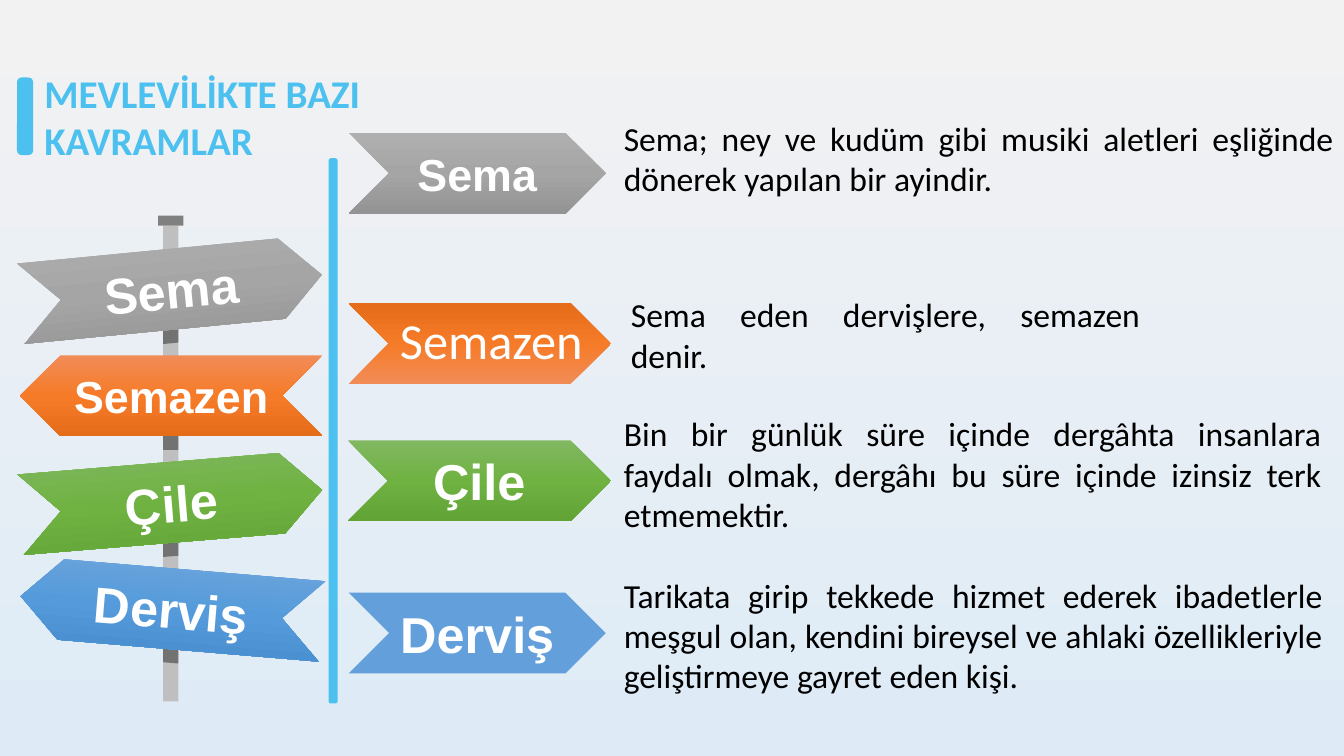
from copy import deepcopy
from math import radians, tan

from lxml.etree import SubElement
from pptx import Presentation
from pptx.dml.color import RGBColor
from pptx.enum.shapes import MSO_SHAPE as Shape
from pptx.enum.text import MSO_ANCHOR as Anchor, MSO_AUTO_SIZE as AutoSize, PP_ALIGN as Align
from pptx.oxml.ns import qn
from pptx.util import Pt

# Colours
WHITE = RGBColor(0xFF, 0xFF, 0xFF)
BLACK = RGBColor(0, 0, 0)
CYAN = RGBColor(0x4C, 0xC1, 0xEF)
POST_GRAY = RGBColor(0xBF, 0xBF, 0xBF)
CAP_GRAY = RGBColor(0x80, 0x80, 0x80)
BACKDROP = [RGBColor(0xF2, 0xF2, 0xF2), RGBColor(0xDE, 0xEB, 0xF7)]
GRAY = [RGBColor(0xAF, 0xAF, 0xAF), RGBColor(0xA5, 0xA5, 0xA5), RGBColor(0x93, 0x93, 0x93)]
ORANGE = [RGBColor(0xF1, 0x8C, 0x57), RGBColor(0xF6, 0x7B, 0x28), RGBColor(0xE5, 0x6C, 0x19)]
GREEN = [RGBColor(0x81, 0xB8, 0x61), RGBColor(0x6F, 0xB2, 0x42), RGBColor(0x62, 0xA3, 0x36)]
BLUE = [RGBColor(0x71, 0xA6, 0xDB), RGBColor(0x55, 0x9B, 0xDB), RGBColor(0x44, 0x8A, 0xCA)]
FLAT_BLUE = [RGBColor(0x63, 0xA0, 0xDB)]

# Content
TITLE = "MEVLEVİLİKTE BAZI KAVRAMLAR"

# Signpost planks: word, size, colours, rotation, points left
PLANKS = [
    ("Sema", 36, GRAY, -5.5, False),
    ("Semazen", 32, ORANGE, 0, True),
    ("Çile", 36, GREEN, -4.7, False),
    ("Derviş", 36, BLUE, 4.8, True),
]

# Terms: word, size, colours, arrow (left, top, width), meaning, meaning box
TERMS = [
    ("Sema", 32, GRAY, (249.1, 95, 183.6),
     "Sema; ney ve kudüm gibi musiki aletleri eşliğinde dönerek yapılan bir ayindir.",
     (438.5, 80.6, 521.3, 65.5)),
    ("Semazen", 36, ORANGE, (249.1, 216.7, 187.2),
     "Sema eden dervişlere, semazen denir.",
     (443.5, 206.6, 378, 65.5)),
    ("Çile", 36, GREEN, (248.4, 314.6, 187.9),
     "Bin bir günlük süre içinde dergâhta insanlara faydalı olmak, dergâhı bu süre "
     "içinde izinsiz terk etmemektir.",
     (438.5, 291.6, 512.6, 94.3)),
    ("Derviş", 36, FLAT_BLUE, (249.1, 423.4, 183.6),
     "Tarikata girip tekkede hizmet ederek ibadetlerle meşgul olan, kendini bireysel "
     "ve ahlaki özellikleriyle geliştirmeye gayret eden kişi.",
     (438.5, 406.8, 513.4, 94.3)),
]
SEMAZEN_LABEL = (278.6, 217.4, 146.2, 51.1)

# Layout
ARROW_HEIGHT = 57.6
PLANK_LEFT, PLANK_TOP, PLANK_WIDTH, PLANK_STEP = 14.4, 177.8, 216, 76.1
POST_LEFT, POST_WIDTH = 116.6, 10.8
SHADE_DROP = 9.8

deck = Presentation()
deck.slide_width, deck.slide_height = Pt(960), Pt(540)
slide = deck.slides.add_slide(deck.slide_layouts[6])


def paint(fill, colors, element=None):
    if len(colors) == 1:
        fill.solid()
        fill.fore_color.rgb = colors[0]
        return
    fill.gradient()
    fill.gradient_angle = 270
    if len(colors) == 3:
        stop_list = element.spPr.find(".//" + qn("a:gsLst"))
        stop_list.insert(1, deepcopy(stop_list[0]))
    for index, (stop, color) in enumerate(zip(fill.gradient_stops, colors)):
        stop.position = index / (len(colors) - 1)
        stop.color.rgb = color


def finish(shape, colors):
    shape.shadow.inherit = False
    shape.line.fill.background()
    paint(shape.fill, colors, shape._element)


def add_block(kind, box, colors, adjustments=()):
    block = slide.shapes.add_shape(kind, *map(Pt, box))
    for index, value in enumerate(adjustments):
        block.adjustments[index] = value
    finish(block, colors)
    return block


def write(frame, words, size, font_name, color, align, bold=False):
    frame.text = words
    paragraph = frame.paragraphs[0]
    paragraph.alignment = align
    font = paragraph.runs[0].font
    font.size, font.name, font.bold = Pt(size), font_name, bold
    font.color.rgb = color


def add_words(box, words, size, color, align, bold=False, wrap=True):
    frame = slide.shapes.add_textbox(*map(Pt, box)).text_frame
    frame.word_wrap = wrap
    frame.auto_size = AutoSize.SHAPE_TO_FIT_TEXT
    write(frame, words, size, "Calibri", color, align, bold)
    return frame


def add_arrow(left, top, width, colors, rotation=0, flipped=False):
    arrow = add_block(Shape.NOTCHED_RIGHT_ARROW, (left, top, width, ARROW_HEIGHT),
                      colors, (1, 0.5))
    arrow.rotation = rotation
    if flipped:
        arrow._element.spPr.xfrm.set("flipH", "1")
    return arrow


def label_arrow(arrow, word, size):
    frame = arrow.text_frame
    frame.margin_left = frame.margin_right = Pt(3.6)
    frame.margin_top = frame.margin_bottom = Pt(3.6)
    frame.vertical_anchor = Anchor.MIDDLE
    write(frame, word, size, "Arial", WHITE, Align.CENTER, True)


def add_shade(plank_top, rotation):
    """Shade of a plank on the post, slanted like the plank."""
    right = POST_LEFT + POST_WIDTH
    slant = POST_WIDTH * tan(radians(rotation)) / 2
    top = plank_top + SHADE_DROP
    corners = [(POST_LEFT, top - slant), (right, top + slant),
               (right, top + slant + ARROW_HEIGHT), (POST_LEFT, top - slant + ARROW_HEIGHT)]
    points = [(Pt(x), Pt(y)) for x, y in corners]
    builder = slide.shapes.build_freeform(*points[0])
    builder.add_line_segments(points[1:], close=True)
    shade = builder.convert_to_shape()
    finish(shade, [BLACK])
    color = shade._element.spPr.find(qn("a:solidFill"))[0]
    SubElement(color, qn("a:alpha")).set("val", "40000")


# Background and post
paint(slide.background.fill, BACKDROP)
add_block(Shape.RECTANGLE, (POST_LEFT, 161.3, POST_WIDTH, 339.8), [POST_GRAY])
add_block(Shape.RECTANGLE, (113, 154.1, 18, 7.2), [CAP_GRAY])

# Signpost planks over their shades
plank_tops = [PLANK_TOP + row * PLANK_STEP for row in range(len(PLANKS))]
for top, (_, _, _, rotation, _) in zip(plank_tops, PLANKS):
    add_shade(top, rotation)
for top, (word, size, colors, rotation, points_left) in zip(plank_tops, PLANKS):
    plank = add_arrow(PLANK_LEFT, top, PLANK_WIDTH, colors, rotation, points_left)
    label_arrow(plank, word, size)

# Title with its marker
title = add_words((31.7, 45.4, 249.1, 74.9), TITLE, 28, CYAN, Align.LEFT, bold=True)
title.margin_left = title.margin_right = 0
title.vertical_anchor = Anchor.BOTTOM
add_block(Shape.ROUNDED_RECTANGLE, (12.2, 55.4, 11.5, 55.4), [CYAN], [0.28])

# Terms and meanings
for word, size, colors, arrow_place, meaning, meaning_box in TERMS:
    if word == "Semazen":  # turned over, so its word stands in a box of its own
        add_arrow(*arrow_place, colors, rotation=180, flipped=True)
        add_words(SEMAZEN_LABEL, word, size, WHITE, Align.LEFT, wrap=False)
    else:
        label_arrow(add_arrow(*arrow_place, colors), word, size)
    add_words(meaning_box, meaning, 24, BLACK, Align.JUSTIFY)

# Divider
add_block(Shape.ROUNDED_RECTANGLE, (234.7, 113, 6.5, 389.5), [CYAN], [0.28])

deck.save("out.pptx")
